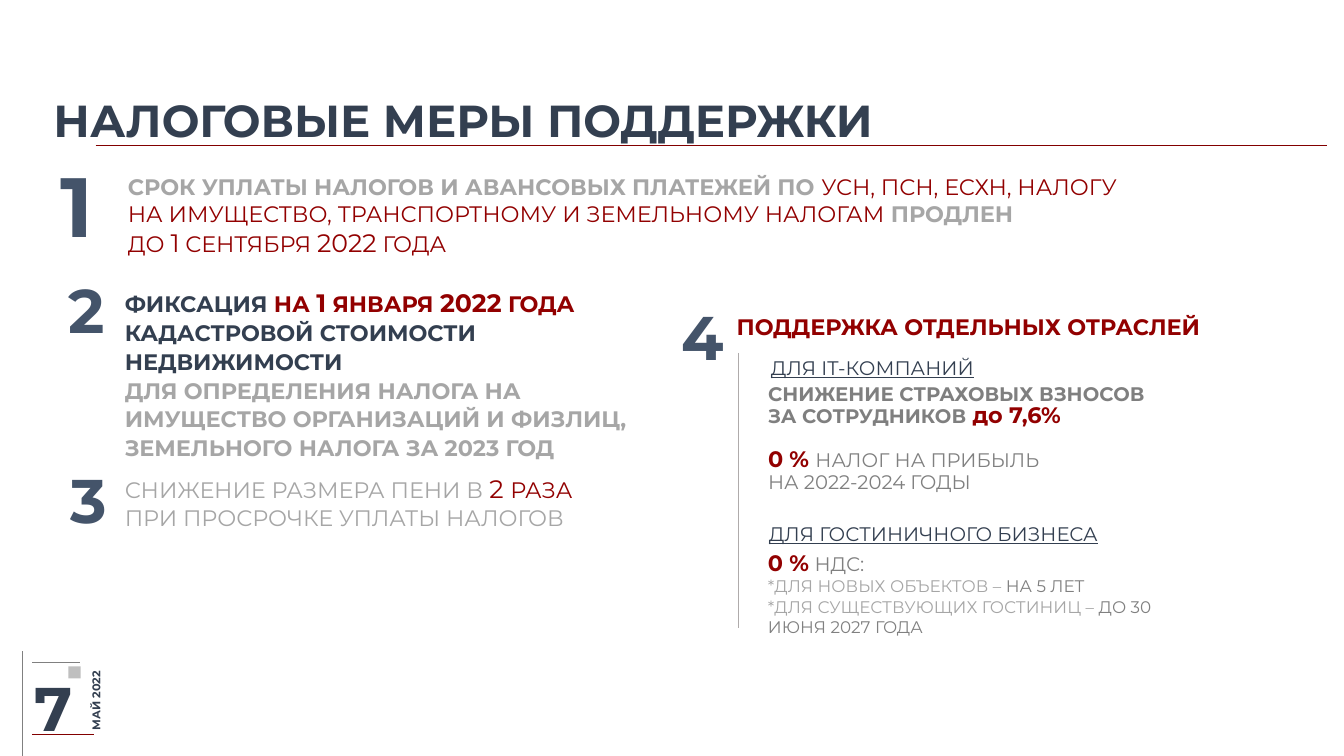
from copy import deepcopy
from dataclasses import dataclass
from typing import Optional

from lxml.etree import SubElement
from pptx import Presentation
from pptx.dml.color import RGBColor
from pptx.enum.shapes import MSO_CONNECTOR as Conn, MSO_SHAPE as Geo
from pptx.enum.text import MSO_ANCHOR as Anchor, MSO_AUTO_SIZE as Fit, PP_ALIGN as Align
from pptx.oxml import parse_xml
from pptx.oxml.ns import nsdecls, qn
from pptx.util import Emu, Inches, Length, Pt


@dataclass(frozen=True)
class Theme:
    font: str = "Montserrat"
    navy: str = "333F50"
    slate: str = "44546A"
    red: str = "920000"
    rule: str = "820000"
    pale: str = "A6A6A6"
    grey: str = "808080"
    dark_grey: str = "7F7F7F"
    divider: str = "AFABAB"
    square: str = "BFBFBF"
    title: float = 32
    hero: float = 60
    number: float = 44
    large: float = 18
    body: float = 16
    detail: float = 14
    note: float = 12
    date: float = 8


T = Theme()
COLUMNS, ROWS = 64, 36
NUMBER_W, NUMBER_H = 4.37, 4.85


@dataclass(frozen=True)
class Run:
    text: str
    color: str
    size: float = T.body
    bold: bool = False
    underline: bool = False


@dataclass(frozen=True)
class Para:
    runs: list[Run]
    spacing: Optional[float | Length] = None
    before: float = 0


@dataclass(frozen=True)
class Block:
    col: float
    row: float
    cols: float
    rows: float
    paras: list[Para]
    middle: bool = False
    wrap: bool = True
    rotation: float = 0


@dataclass(frozen=True)
class Rule:
    col: float
    row: float
    end_col: float
    end_row: float
    color: str


def number(col: float, row: float, digit: str, size: float = T.number) -> Block:
    para = Para([Run(digit, T.slate, size, True)], Pt(32))
    return Block(col, row, NUMBER_W, NUMBER_H, [para], middle=True)


def heading(col: float, row: float, cols: float, text: str) -> Block:
    run = Run(text, T.navy, T.detail, underline=True)
    return Block(col, row, cols, 1.63, [Para([run])], wrap=False)


TITLE = Block(2.06, 3.98, 58.22, 3.46,
              [Para([Run("НАЛОГОВЫЕ МЕРЫ ПОДДЕРЖКИ", T.navy, T.title, True)])], middle=True)

BLOCKS = [
    Block(2.4, 31.78, 4.32, 2.64, [Para([Run("МАЙ 2022", T.navy, T.date, True)])],
          middle=True, rotation=270),
    Block(1.15, 32.35, 3.31, 2.64, [Para([Run("7", T.navy, T.number, True)])], middle=True),
    Block(5.62, 8.02, 57.55, 4.7, [Para([
        Run("СРОК УПЛАТЫ НАЛОГОВ И АВАНСОВЫХ ПЛАТЕЖЕЙ ПО ", T.pale, bold=True),
        Run("УСН, ПСН, ЕСХН, НАЛОГУ \nНА ИМУЩЕСТВО, ТРАНСПОРТНОМУ И ЗЕМЕЛЬНОМУ НАЛОГАМ ", T.red),
        Run("ПРОДЛЕН \n", T.pale, bold=True),
        Run("ДО ", T.red),
        Run("1", T.red, T.large),
        Run(" СЕНТЯБРЯ ", T.red),
        Run("2022", T.red, T.large),
        Run(" ГОДА", T.red)])]),
    Block(5.47, 13.34, 26.02, 8.88, [
        Para([Run("ФИКСАЦИЯ ", T.navy, bold=True),
              Run("НА ", T.red, bold=True),
              Run("1", T.red, T.large, True),
              Run(" ЯНВАРЯ ", T.red, bold=True),
              Run("2022", T.red, T.large, True),
              Run(" ГОДА ", T.red, bold=True),
              Run("КАДАСТРОВОЙ СТОИМОСТИ НЕДВИЖИМОСТИ", T.navy, bold=True)], 1.07),
        Para([Run("ДЛЯ ОПРЕДЕЛЕНИЯ НАЛОГА НА ИМУЩЕСТВО ОРГАНИЗАЦИЙ И ФИЗЛИЦ, "
                  "ЗЕМЕЛЬНОГО НАЛОГА ЗА 2023 ГОД", T.pale, bold=True)], 1.07)]),
    Block(5.47, 22.32, 23.9, 3.22, [Para([
        Run("СНИЖЕНИЕ РАЗМЕРА ПЕНИ В ", T.pale),
        Run("2 ", T.red, T.large),
        Run("РАЗА\n", T.red),
        Run("ПРИ ПРОСРОЧКЕ УПЛАТЫ НАЛОГОВ", T.pale)])]),
    Block(34.61, 14.69, 25.34, 1.78,
          [Para([Run("ПОДДЕРЖКА ОТДЕЛЬНЫХ ОТРАСЛЕЙ", T.red, bold=True)])]),
    heading(36.24, 16.7, 11.09, "ДЛЯ IT-КОМПАНИЙ"),
    Block(36.1, 18, 23.71, 5.81, [
        Para([Run("СНИЖЕНИЕ СТРАХОВЫХ ВЗНОСОВ", T.dark_grey, T.detail, True)], Pt(16)),
        Para([Run("ЗА СОТРУДНИКОВ", T.dark_grey, T.detail, True),
              Run(" ", T.dark_grey, bold=True),
              Run("до 7,6%", T.red, bold=True)], Pt(16)),
        Para([Run("0 % ", T.red, bold=True),
              Run("НАЛОГ НА ПРИБЫЛЬ", T.grey, T.detail)], Pt(16), before=16),
        Para([Run("НА 2022-2024 ГОДЫ", T.grey, T.detail)], Pt(15))]),
    heading(36.14, 24.62, 17.86, "ДЛЯ ГОСТИНИЧНОГО БИЗНЕСА"),
    Block(36.1, 25.92, 19.34, 4.7, [
        Para([Run("0 %", T.red, bold=True),
              Run(" ", T.red, T.detail, True),
              Run("НДС:", T.grey, T.detail)]),
        Para([Run("*ДЛЯ НОВЫХ ОБЪЕКТОВ – ", T.pale, T.note),
              Run("НА 5 ЛЕТ", T.grey, T.note)]),
        Para([Run("*ДЛЯ СУЩЕСТВУЮЩИХ ГОСТИНИЦ – ", T.pale, T.note),
              Run("ДО 30 ИЮНЯ 2027 ГОДА", T.grey, T.note)])]),
    number(2.4, 8.64, "1", T.hero),
    number(2.78, 12.96, "2"),
    number(2.88, 22.03, "3"),
    number(31.97, 14.26, "4"),
]

RULES = [
    Rule(1.06, 31.01, 1.06, 36, T.grey),
    Rule(3.79, 31.54, 1.54, 31.54, T.grey),
    Rule(4.46, 34.99, 1.54, 34.99, T.rule),
    Rule(4.56, 6.91, 63.17, 6.91, T.rule),
    Rule(35.14, 16.8, 35.14, 29.9, T.divider),
]

prs = Presentation()
prs.slide_width, prs.slide_height = Inches(13.33), Inches(7.5)
slide = prs.slides.add_slide(prs.slide_layouts[5])


def x(cols: float) -> Emu:
    return Emu(round(prs.slide_width * cols / COLUMNS))


def y(rows: float) -> Emu:
    return Emu(round(prs.slide_height * rows / ROWS))


def add_run(p, run: Run) -> None:
    for i, part in enumerate(run.text.split("\n")):
        if i:
            p.add_line_break()
            p._p[-1].append(deepcopy(p.runs[-1]._r.rPr))
        if part:
            r = p.add_run()
            r.text = part
            r.font.name, r.font.size, r.font.bold = T.font, Pt(run.size), run.bold
            r.font.underline = run.underline
            r.font.color.rgb = RGBColor.from_string(run.color)


def write(sp, block: Block) -> None:
    tf = sp.text_frame
    tf.word_wrap = block.wrap
    tf.auto_size = Fit.NONE if block.middle else Fit.SHAPE_TO_FIT_TEXT
    tf.vertical_anchor = Anchor.MIDDLE if block.middle else Anchor.TOP
    for i, para in enumerate(block.paras):
        p = tf.add_paragraph() if i else tf.paragraphs[0]
        p.alignment = Align.LEFT
        p.line_spacing = para.spacing
        p.space_before = Pt(para.before)
        for run in para.runs:
            add_run(p, run)


def draw_block(block: Block) -> None:
    sp = slide.shapes.add_textbox(x(block.col), y(block.row), x(block.cols), y(block.rows))
    sp.rotation = block.rotation
    write(sp, block)


def draw_rule(rule: Rule) -> None:
    line = slide.shapes.add_connector(Conn.STRAIGHT, x(rule.col), y(rule.row),
                                      x(rule.end_col), y(rule.end_row))
    line.line.color.rgb = RGBColor.from_string(rule.color)
    line.line.width = Pt(0.5)
    SubElement(line._element.spPr, qn("a:effectLst"))


def draw_title() -> None:
    sp = slide.shapes.title
    sp.left, sp.top = x(TITLE.col), y(TITLE.row)
    sp.width, sp.height = x(TITLE.cols), y(TITLE.rows)
    write(sp, TITLE)
    outline = parse_xml(f'<a:ln {nsdecls("a")} w="{Pt(0.8)}"><a:solidFill>'
                        f'<a:srgbClr val="{T.navy}"/></a:solidFill></a:ln>')
    sp.text_frame.paragraphs[0].runs[0]._r.rPr.insert(0, outline)


def draw_square() -> None:
    sp = slide.shapes.add_shape(Geo.RECTANGLE, x(3.26), y(31.73), x(0.58), y(0.58))
    sp.shadow.inherit = False
    sp.fill.solid()
    sp.fill.fore_color.rgb = RGBColor.from_string(T.square)
    sp.line.fill.background()


draw_title()
draw_square()
for rule in RULES:
    draw_rule(rule)
for block in BLOCKS:
    draw_block(block)
prs.save("out.pptx")
